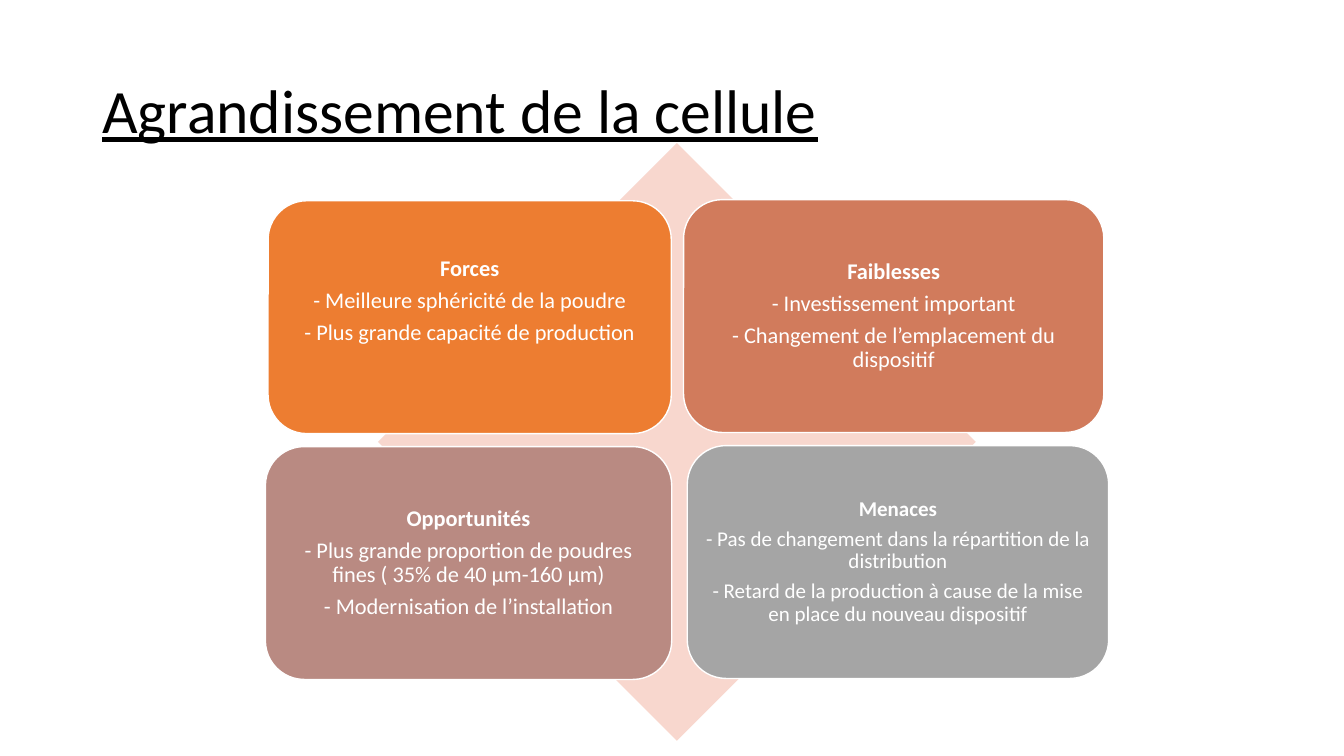
from dataclasses import dataclass

import pptx
import pptx.dml.color
import pptx.enum.shapes
import pptx.enum.text
import pptx.shapes.autoshape
import pptx.slide
import pptx.text.text
import pptx.util

Pt = pptx.util.Pt
RGBColor = pptx.dml.color.RGBColor
Shape = pptx.enum.shapes.MSO_SHAPE
Align = pptx.enum.text.PP_ALIGN

BLACK = RGBColor(0x00, 0x00, 0x00)
WHITE = RGBColor(0xFF, 0xFF, 0xFF)
PALE_ORANGE = RGBColor(0xF8, 0xD7, 0xCE)
ORANGE = RGBColor(0xED, 0x7D, 0x31)
TERRACOTTA = RGBColor(0xD1, 0x7B, 0x5C)
ROSE = RGBColor(0xB9, 0x8A, 0x82)
GREY = RGBColor(0xA5, 0xA5, 0xA5)

FONT = "Calibri"
LINE_SPACING = 0.9
CARD_HEIGHT = 166.3


@dataclass(frozen=True)
class Quadrant:
    heading: str
    points: tuple[str, ...]
    left: float
    top: float
    width: float
    color: RGBColor
    size: float = 16
    inset: float = 5
    bottom_inset: float = 5


QUADRANTS = (
    Quadrant(
        "Forces",
        ("- Meilleure sphéricité de la poudre", "- Plus grande capacité de production"),
        191.5, 143.4, 288, ORANGE, bottom_inset=28,
    ),
    Quadrant(
        "Faiblesses",
        ("- Investissement important", "- Changement de l’emplacement du dispositif"),
        488.3, 142.6, 300.2, TERRACOTTA,
    ),
    Quadrant(
        "Opportunités",
        (
            "- Plus grande proportion de poudres fines ( 35% de 40 µm-160 µm)",
            "- Modernisation de l’installation",
        ),
        189.6, 319, 290.2, ROSE,
    ),
    Quadrant(
        "Menaces",
        (
            "- Pas de changement dans la répartition de la distribution",
            "- Retard de la production à cause de la mise en place du nouveau dispositif",
        ),
        490.9, 318.3, 301, GREY, size=15, inset=4.5, bottom_inset=4.5,
    ),
)


def style_paragraph(
    para: pptx.text.text._Paragraph, size: float, color: RGBColor
) -> None:
    para.line_spacing = LINE_SPACING
    para.font.name = FONT
    para.font.size = Pt(size)
    para.font.color.rgb = color


def add_title(page: pptx.slide.Slide, title: str) -> None:
    box = page.shapes.add_textbox(Pt(66), Pt(28.8), Pt(828), Pt(104.4))
    frame = box.text_frame
    frame.word_wrap = True
    frame.vertical_anchor = pptx.enum.text.MSO_ANCHOR.MIDDLE
    para = frame.paragraphs[0]
    para.text = title
    style_paragraph(para, 44, BLACK)
    para.font.underline = True


def add_filled_shape(
    page: pptx.slide.Slide,
    kind: pptx.enum.shapes.MSO_SHAPE,
    left: float,
    top: float,
    width: float,
    height: float,
    color: RGBColor,
) -> pptx.shapes.autoshape.Shape:
    shape = page.shapes.add_shape(kind, Pt(left), Pt(top), Pt(width), Pt(height))
    shape.shadow.inherit = False
    shape.fill.solid()
    shape.fill.fore_color.rgb = color
    shape.line.fill.background()
    return shape


def add_quadrant(page: pptx.slide.Slide, quadrant: Quadrant) -> None:
    card = add_filled_shape(
        page, Shape.ROUNDED_RECTANGLE, quadrant.left, quadrant.top,
        quadrant.width, CARD_HEIGHT, quadrant.color,
    )
    card.line.color.rgb = WHITE
    card.line.width = Pt(1)
    frame = card.text_frame
    frame.word_wrap = True
    frame.vertical_anchor = pptx.enum.text.MSO_ANCHOR.MIDDLE
    frame.margin_left = frame.margin_right = frame.margin_top = Pt(quadrant.inset)
    frame.margin_bottom = Pt(quadrant.bottom_inset)
    frame.text = "\n".join((quadrant.heading, *quadrant.points))
    for para in frame.paragraphs:
        style_paragraph(para, quadrant.size, WHITE)
        para.alignment = Align.CENTER
        para.space_after = Pt(quadrant.size * 0.35)
    frame.paragraphs[0].font.bold = True


def main() -> None:
    deck = pptx.Presentation()
    deck.slide_width = Pt(960)
    deck.slide_height = Pt(540)
    page = deck.slides.add_slide(deck.slide_layouts[6])
    add_title(page, "Agrandissement de la cellule")
    add_filled_shape(page, Shape.DIAMOND, 270, 102.2, 427, 427, PALE_ORANGE)
    for quadrant in QUADRANTS:
        add_quadrant(page, quadrant)
    deck.save("out.pptx")


if __name__ == "__main__":
    main()
